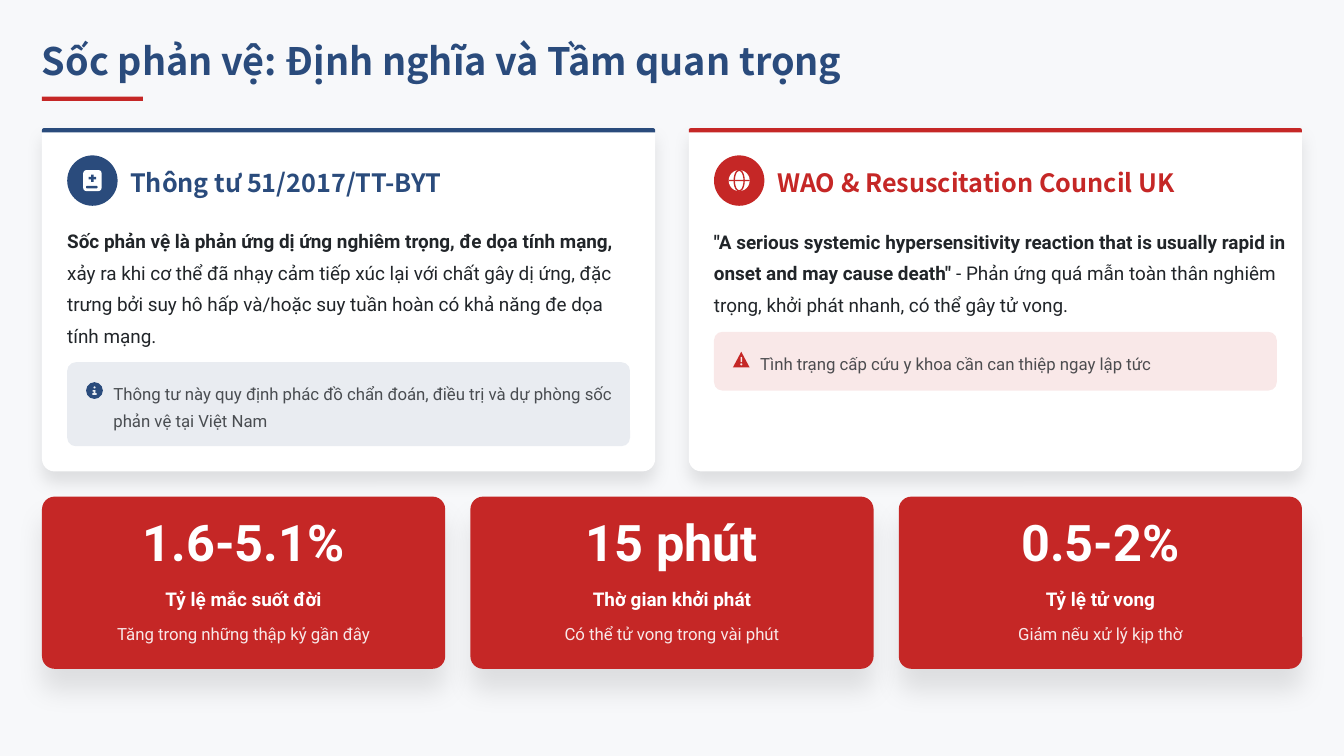
from lxml.etree import SubElement
from pptx import Presentation
from pptx.dml.color import RGBColor
from pptx.enum.shapes import MSO_SHAPE
from pptx.enum.text import MSO_ANCHOR, PP_ALIGN
from pptx.oxml.ns import qn
from pptx.util import Pt

NAVY, RED, WHITE, INK = "2A4B7C", "C52726", "FFFFFF", "212529"
NAVY_TINT, RED_TINT = "EAEDF2", "F9E9E9"
RECTANGLE, ROUNDED, OVAL = MSO_SHAPE.RECTANGLE, MSO_SHAPE.ROUNDED_RECTANGLE, MSO_SHAPE.OVAL

HEADING = {"name": "Noto Sans CJK SC", "bold": True}
BODY = {"name": "Roboto", "size": Pt(18), "bold": False}
STRONG = BODY | {"bold": True}
SMALL = BODY | {"size": Pt(16)}
FIGURE = STRONG | {"size": Pt(48)}

presentation = Presentation()
presentation.slide_width, presentation.slide_height = Pt(1280), Pt(720)
slide = presentation.slides.add_slide(presentation.slide_layouts[6])
slide.background.fill.solid()
slide.background.fill.fore_color.rgb = RGBColor.from_string("F7F8FA")


def add_block(kind, box, color, radii=(), opacity=100, shadow=None):
    """Add a filled shape; radii are corner sizes in points, shadow is (blur, distance)."""
    shape = slide.shapes.add_shape(kind, *map(Pt, box))
    for index, radius in enumerate(radii):
        shape.adjustments[index] = min(radius / min(box[2:]), 0.5)
    shape.fill.solid()
    shape.fill.fore_color.rgb = RGBColor.from_string(color)
    shape.line.fill.background()
    shape.shadow.inherit = False
    properties = shape._element.spPr
    if opacity < 100:
        SubElement(next(properties.iter(qn("a:srgbClr"))), qn("a:alpha"), val=str(opacity * 1000))
    if shadow:
        blur, distance = shadow
        outer = SubElement(properties.find(qn("a:effectLst")), qn("a:outerShdw"), blurRad=str(Pt(blur)),
                           dist=str(Pt(distance)), dir="5400000", algn="ctr", rotWithShape="0")
        shade = SubElement(outer, qn("a:srgbClr"), val="000000")
        SubElement(shade, qn("a:alpha"), val="10000")
    return shape


def add_text(box, runs, color, spacing, align=PP_ALIGN.LEFT, opacity=100, wrap=True):
    """Add a one-paragraph text box; runs are (text, font values) pairs."""
    frame = slide.shapes.add_textbox(*map(Pt, box)).text_frame
    frame_format = {"word_wrap": wrap, "vertical_anchor": MSO_ANCHOR.MIDDLE, "margin_left": 0,
                    "margin_top": 0, "margin_right": 0, "margin_bottom": 0}
    for name, value in frame_format.items():
        setattr(frame, name, value)
    paragraph = frame.paragraphs[0]
    paragraph.alignment, paragraph.line_spacing = align, spacing
    for text, font in runs:
        run = paragraph.add_run()
        run.text = text
        for name, value in font.items():
            setattr(run.font, name, value)
        run.font.color.rgb = RGBColor.from_string(color)
        if opacity < 100:
            SubElement(next(run._r.iter(qn("a:srgbClr"))), qn("a:alpha"), val=str(opacity * 1000))


# Title
add_text((40, 40, 1218, 40), [("Sốc phản vệ: Định nghĩa và Tầm quan trọng", HEADING | {"size": Pt(36)})],
         NAVY, 0.9)
add_block(RECTANGLE, (40, 92, 96, 4), RED)

# Definition cards
cards = [
    {"left": 40, "color": NAVY, "heading": "Thông tư 51/2017/TT-BYT", "heading_width": 303,
     "body": [("Sốc phản vệ là phản ứng dị ứng nghiêm trọng, đe dọa tính mạng,", STRONG),
              (" xảy ra khi cơ thể đã nhạy cảm tiếp xúc lại với chất gây dị ứng, đặc trưng bởi suy hô hấp "
               "và/hoặc suy tuần hoàn có khả năng đe dọa tính mạng.", BODY)],
     "body_height": 117, "note_top": 345, "note_height": 80,
     "note": "Thông tư này quy định phác đồ chẩn đoán, điều trị và dự phòng sốc phản vệ tại Việt Nam"},
    {"left": 656, "color": RED, "heading": "WAO & Resuscitation Council UK", "heading_width": 395,
     "body": [('"A serious systemic hypersensitivity reaction that is usually rapid in onset and may cause death"',
               STRONG),
              (" - Phản ứng quá mẫn toàn thân nghiêm trọng, khởi phát nhanh, có thể gây tử vong.", BODY)],
     "body_height": 88, "note_top": 316, "note_height": 56,
     "note": "Tình trạng cấp cứu y khoa cần can thiệp ngay lập tức"},
]
for card in cards:
    left, color, note_top, note_height = card["left"], card["color"], card["note_top"], card["note_height"]
    inner = left + 24
    add_block(MSO_SHAPE.ROUND_2_SAME_RECTANGLE, (left, 122, 584, 327), WHITE, (4, 12), shadow=(15, 10))
    add_block(MSO_SHAPE.ROUND_2_SAME_RECTANGLE, (left, 122, 584, 4), color, (4, 0))
    add_block(OVAL, (inner, 148, 48, 48), color)
    add_text((left + 84, 156, card["heading_width"], 32), [(card["heading"], HEADING | {"size": Pt(24)})],
             color, 1.1, wrap=False)
    add_text((inner, 212, 545, card["body_height"]), card["body"], INK, 1.4)
    add_block(ROUNDED, (inner, note_top, 536, note_height), color, (8,), opacity=10)
    add_text((inner + 44, note_top + 16, 484, note_height - 32), [(card["note"], SMALL)], INK, 1.3, opacity=80)

# Book icon
add_block(ROUNDED, (79.25, 162, 17.5, 20), WHITE, (3,))
add_block(RECTANGLE, (84.5, 168.5, 7, 2.4), NAVY)
add_block(RECTANGLE, (86.75, 166.25, 2.5, 7), NAVY)
add_block(ROUNDED, (82, 177, 11, 2.5), NAVY, (1.25,))

# Globe icon
add_block(OVAL, (694, 162, 20, 20), WHITE)
meridian = add_block(OVAL, (699.3, 162, 9.4, 20), WHITE)
meridian.line.color.rgb = RGBColor.from_string(RED)
meridian.line.width = Pt(1.3)
add_block(RECTANGLE, (694, 171.4, 20, 1.2), RED)

# Information icon
add_block(OVAL, (82, 364, 16, 16), NAVY)
add_block(OVAL, (89, 368, 2, 2), NAVY_TINT)
for box in [(88.25, 371.5, 2.5, 1.5), (89.25, 371.5, 1.5, 4), (88, 374.5, 4, 1.5)]:
    add_block(RECTANGLE, box, NAVY_TINT)

# Warning icon
add_block(MSO_SHAPE.ISOSCELES_TRIANGLE, (698, 335, 16, 15), RED)
add_block(ROUNDED, (705.25, 340, 1.5, 5), RED_TINT, (0.75,))
add_block(OVAL, (705, 346, 2, 2), RED_TINT)

# Key figures
figures = [
    ("1.6-5.1%", "Tỷ lệ mắc suốt đời", "Tăng trong những thập kỷ gần đây"),
    ("15 phút", "Thờ gian khởi phát", "Có thể tử vong trong vài phút"),
    ("0.5-2%", "Tỷ lệ tử vong", "Giảm nếu xử lý kịp thờ"),
]
for index, (figure, label, detail) in enumerate(figures):
    left = 40 + 408 * index
    add_block(ROUNDED, (left, 473, 384, 164), RED, (12,), shadow=(25, 20))
    rows = [(figure, FIGURE, 497, 48, 0.8, 100), (label, STRONG, 553, 28, 1.3, 100),
            (detail, SMALL, 589, 24, 1.3, 90)]
    for text, font, top, height, spacing, opacity in rows:
        add_text((left + 12, top, 360, height), [(text, font)], WHITE, spacing, PP_ALIGN.CENTER, opacity)

presentation.save("out.pptx")
